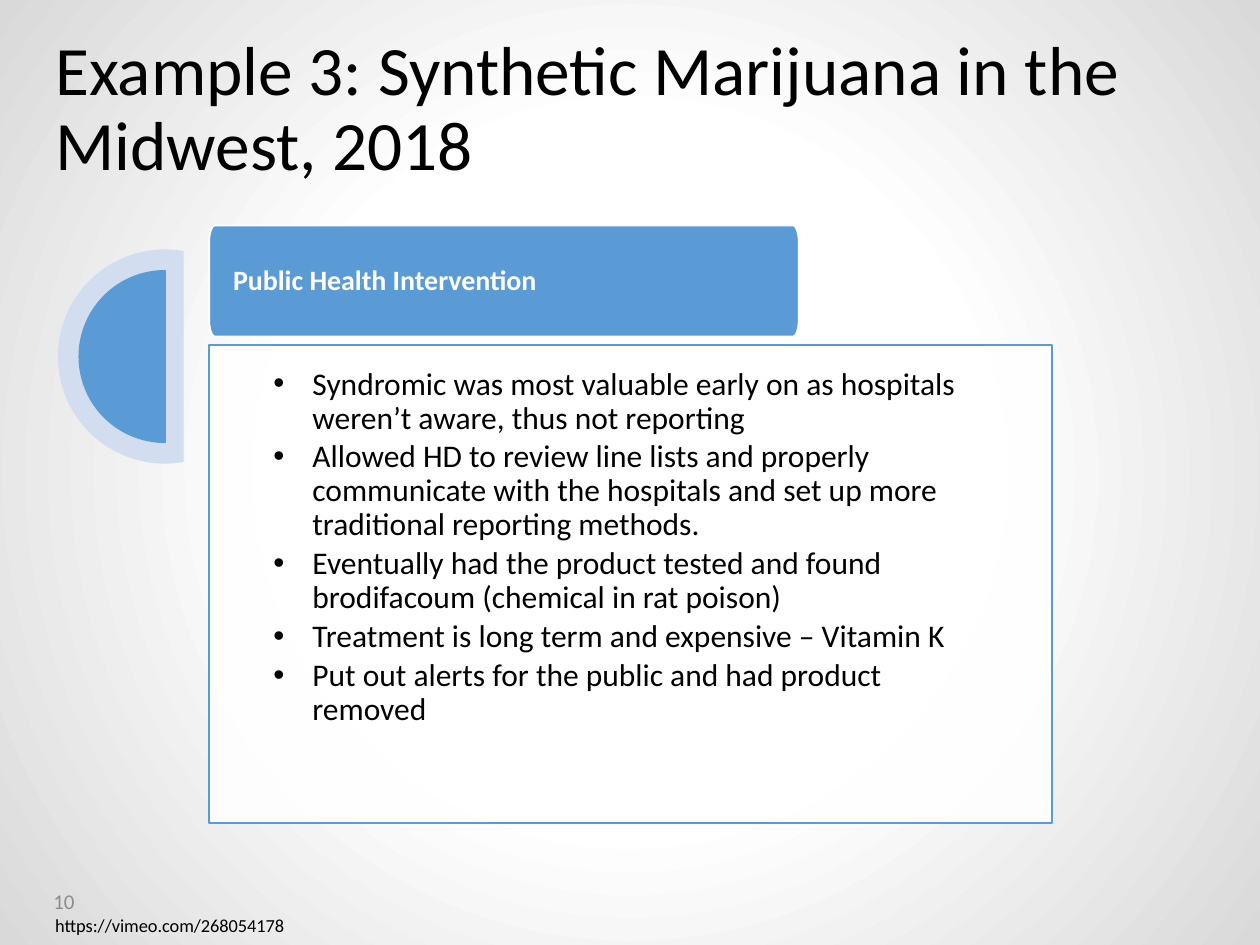
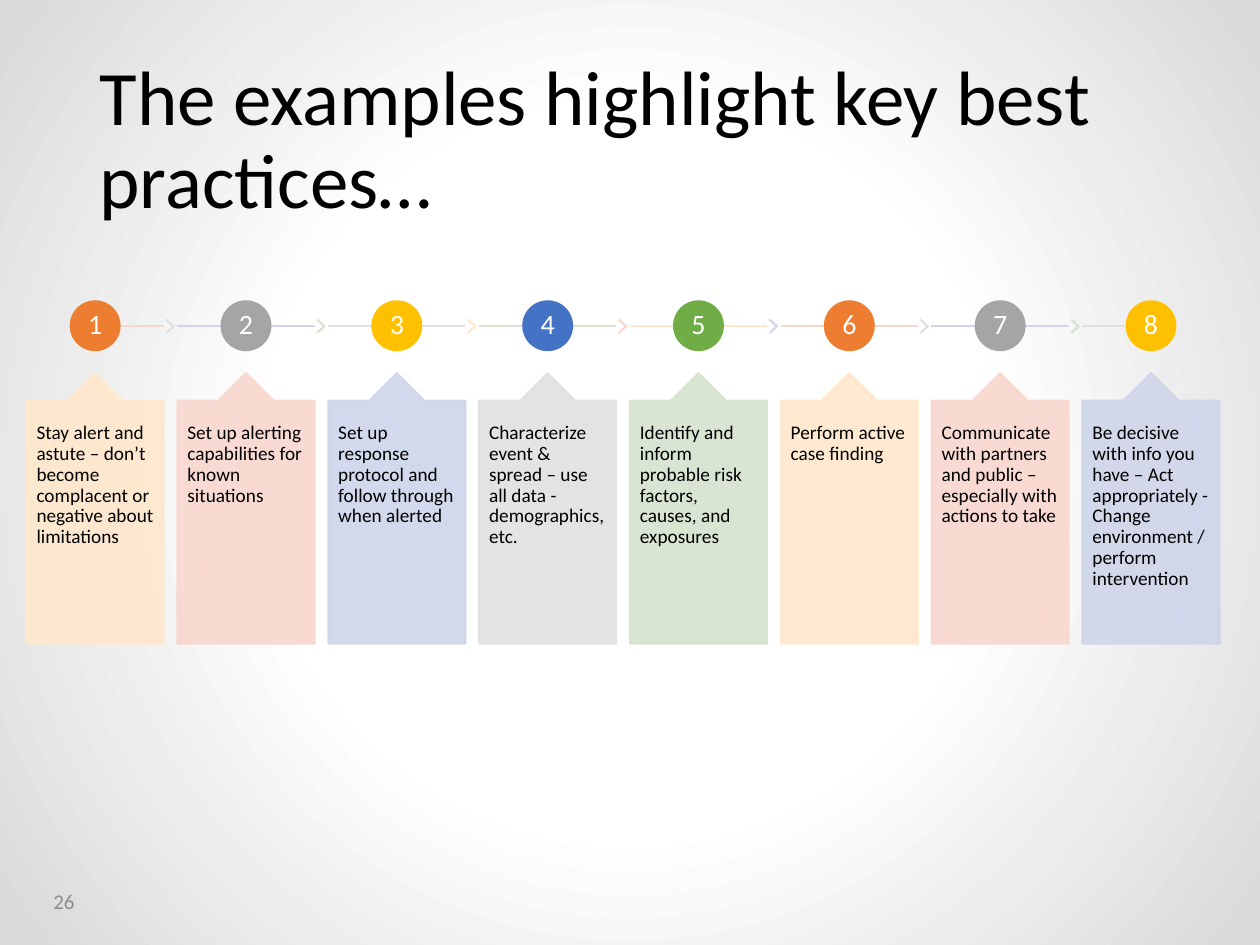
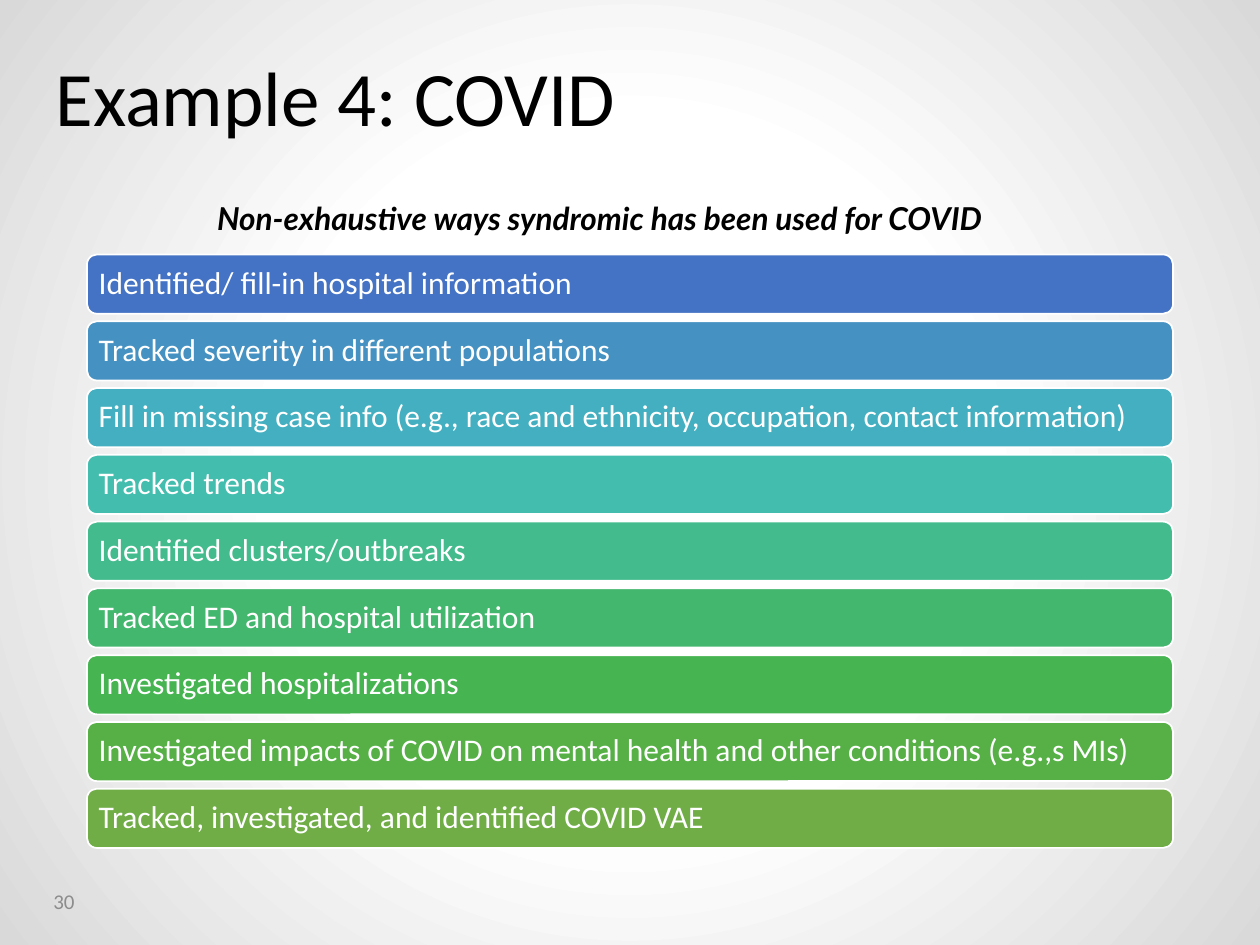
"""Build three slides on syndromic surveillance examples and best practices."""
from dataclasses import dataclass
from math import cos, radians, sin

from lxml.etree import SubElement
from pptx import Presentation
from pptx.dml.color import RGBColor
from pptx.enum.shapes import MSO_CONNECTOR, MSO_SHAPE as Preset
from pptx.enum.text import MSO_ANCHOR as Anchor, MSO_AUTO_SIZE, PP_ALIGN as Align
from pptx.oxml import parse_xml
from pptx.oxml.ns import nsdecls, qn
from pptx.util import Inches, Pt


@dataclass(frozen=True)
class Theme:
    font: str = "Calibri"
    accent_font: str = "Lato"
    ink: str = "000000"
    paper: str = "FFFFFF"
    edge: str = "D9D9D9"
    muted: str = "8C8C8C"
    blue: str = "5B9BD5"
    pale_blue: str = "D2DEEF"
    badges: tuple = ("ED7D31", "A5A5A5", "FFC000", "4472C4", "70AD47")
    pastels: tuple = ("FFE8CC", "F8D7CE", "CFD5EA", "E1E1E1", "D5E3CF")
    bars: tuple = ("4472C4", "4491C2", "43AFC0", "43BDAE", "43BB8D",
                   "44B76E", "45B451", "56B046", "70AD47")
    title_size: float = 44
    long_title_size: float = 39.6
    body_size: float = 18
    label_size: float = 16
    number_size: float = 12
    card_size: float = 11
    link_size: float = 10.5


theme = Theme()
presentation = Presentation()
presentation.slide_width = Inches(10)
presentation.slide_height = Inches(7.5)
unit = presentation.slide_width // 100


def add_box(slide, preset, area, fill=None, line=None, opacity=100):
    """Add a preset shape, or a text box when preset is None, on the 100 x 75 grid."""
    place = [round(unit * length) for length in area]
    if preset is None:
        return slide.shapes.add_textbox(*place)
    shape = slide.shapes.add_shape(preset, *place)
    shape.shadow.inherit = False
    shape.fill.solid()
    shape.fill.fore_color.rgb = RGBColor.from_string(fill)
    if line:
        shape.line.color.rgb = RGBColor.from_string(line)
        shape.line.width = Pt(1)
    else:
        shape.line.fill.background()
    if opacity < 100:
        for color in shape.element.spPr.iter(qn("a:srgbClr")):
            SubElement(color, qn("a:alpha"), val=str(opacity * 1000))
    return shape


def write(shape, lines, size, color=theme.ink, align=Align.LEFT, anchor=Anchor.MIDDLE,
          insets=(1, 0.5, 1, 0.5), spacing=0.9, after=0):
    """Write one paragraph per line and return the paragraphs."""
    frame = shape.text_frame
    frame.word_wrap = True
    frame.auto_size = MSO_AUTO_SIZE.NONE
    frame.vertical_anchor = anchor
    frame.margin_left, frame.margin_top, frame.margin_right, frame.margin_bottom = [
        round(unit * inset) for inset in insets]
    frame.text = "\n".join(lines)
    for paragraph in frame.paragraphs:
        paragraph.alignment = align
        paragraph.line_spacing = spacing
        paragraph.space_before = Pt(0)
        paragraph.space_after = Pt(after)
        paragraph.font.name = theme.font
        paragraph.font.size = Pt(size)
        paragraph.font.color.rgb = RGBColor.from_string(color)
    return frame.paragraphs


master = presentation.slide_master
master.background.fill.solid()
background = master.element.find(".//" + qn("p:bgPr"))
stops = "".join(f'<a:gs pos="{position}000"><a:srgbClr val="{color}"/></a:gs>'
                for position, color in ((0, theme.paper), (45, theme.paper), (100, theme.edge)))
background.replace(background[0], parse_xml(
    f'<a:gradFill {nsdecls("a")} rotWithShape="1"><a:gsLst>{stops}</a:gsLst><a:path path="circle">'
    '<a:fillToRect l="50000" t="50000" r="50000" b="50000"/></a:path></a:gradFill>'))

slides = []
for layout, number, title, area, size in (
        (1, "10", "Example 3: Synthetic Marijuana in the Midwest, 2018",
         (3.4, 2.8, 89.2, 12), theme.long_title_size),
        (5, "26", "The examples highlight key best practices…",
         (6.9, 4, 86.2, 14.5), theme.title_size),
        (5, "30", "Example 4: COVID", (3.4, 0.8, 86.2, 14.5), theme.title_size)):
    slide = presentation.slides.add_slide(presentation.slide_layouts[layout])
    heading = slide.shapes.title
    heading.left, heading.top, heading.width, heading.height = [
        round(unit * length) for length in area]
    write(heading, [title], size)
    write(add_box(slide, None, (0, 69.5, 6.9, 4)), [number], theme.number_size,
          theme.muted, Align.RIGHT, spacing=1)
    slides.append(slide)
intervention, practices, covid = slides

panel = intervention.placeholders[1]
panel.left, panel.top, panel.width, panel.height = [
    round(unit * length) for length in (16.6, 27.4, 66.9, 37.9)]
panel.fill.solid()
panel.fill.fore_color.rgb = RGBColor.from_string(theme.paper)
SubElement(panel.element.spPr.find(".//" + qn("a:srgbClr")), qn("a:alpha"), val="90000")
panel.line.color.rgb = RGBColor.from_string(theme.blue)
panel.line.width = Pt(1)
points = write(panel, [
    "Syndromic was most valuable early on as hospitals weren’t aware, thus not reporting",
    "Allowed HD to review line lists and properly communicate with the hospitals "
    "and set up more traditional reporting methods.",
    "Eventually had the product tested and found brodifacoum (chemical in rat poison)",
    "Treatment is long term and expensive – Vitamin K",
    "Put out alerts for the public and had product removed",
], theme.body_size, anchor=Anchor.TOP, insets=(5.1, 1.8, 5.1, 1.2), after=2.7)
for paragraph in points:
    properties = paragraph._p.get_or_add_pPr()
    properties.set("marL", str(round(unit * 3.1)))
    properties.set("indent", str(round(unit * -3.1)))

left, top, right, bottom = 16.6, 17.9, 63.4, 26.7
radius_x, radius_y = 0.45, 1.4
outline = []
for center_x, center_y, start in ((left + radius_x, top + radius_y, 180),
                                  (right - radius_x, top + radius_y, 270),
                                  (right - radius_x, bottom - radius_y, 0),
                                  (left + radius_x, bottom - radius_y, 90)):
    for angle in range(start, start + 91, 10):
        outline.append((round(unit * (center_x + radius_x * cos(radians(angle)))),
                        round(unit * (center_y + radius_y * sin(radians(angle))))))
builder = intervention.shapes.build_freeform(*outline[0])
builder.add_line_segments(outline[1:])
banner = builder.convert_to_shape()
banner.shadow.inherit = False
banner.fill.solid()
banner.fill.fore_color.rgb = RGBColor.from_string(theme.blue)
banner.line.color.rgb = RGBColor.from_string(theme.paper)
banner.line.width = Pt(1)
write(banner, ["Public Health Intervention"], theme.label_size, theme.paper,
      insets=(1.9, 0.1, 1.9, 0.1))[0].font.bold = True

for preset, area, fill, line, angles in (
        (Preset.CHORD, (4.6, 19.8, 17, 17), theme.pale_blue, None, (48, 168)),
        (Preset.PIE, (6.3, 21.5, 13.6, 13.6), theme.blue, theme.blue, (54, 162))):
    segment = add_box(intervention, preset, area, fill, line)
    segment.adjustments[0], segment.adjustments[1] = angles
write(add_box(intervention, None, (3.4, 72.1, 34, 2.8)), ["https://vimeo.com/268054178"],
      theme.link_size, anchor=Anchor.TOP, spacing=1)

steps = (
    "Stay alert and astute – don’t become complacent or negative about limitations",
    "Set up alerting capabilities for known situations",
    "Set up response protocol and follow through when alerted",
    "Characterize event & spread – use all data - demographics, etc.",
    "Identify and inform probable risk factors, causes, and exposures",
    "Perform active case finding",
    "Communicate with partners and public – especially with actions to take",
    "Be decisive with info you have – Act appropriately - Change environment / "
    "perform intervention",
)
first_left, last_left, card_width, badge = 2.1, 85.9, 10.9, 3.9
pitch = (last_left - first_left) / (len(steps) - 1)
axis = 25.85
for index, step in enumerate(steps):
    left = first_left + index * pitch
    center = left + card_width / 2
    is_last = index == len(steps) - 1
    card_color, line_color, chevron_color = [
        theme.pastels[(index + shift) % len(theme.pastels)] for shift in (0, 1, 3)]

    start = left if index else center
    end = center if is_last else left + card_width
    connector = practices.shapes.add_connector(
        MSO_CONNECTOR.STRAIGHT, *[round(unit * length) for length in (start, axis, end, axis)])
    connector.line.color.rgb = RGBColor.from_string(line_color)
    connector.line.width = Pt(1)
    SubElement(connector.element.spPr, qn("a:effectLst"))

    if not is_last:
        chevron = add_box(practices, Preset.CHEVRON, (left + 11.1, axis - 0.45, 0.6, 1),
                          chevron_color, chevron_color, 90)
        chevron.adjustments[0] = 0.9
    badge_color = theme.badges[index % len(theme.badges)]
    circle = add_box(practices, Preset.OVAL, (center - badge / 2, axis - badge / 2, badge, badge),
                     badge_color, badge_color)
    write(circle, [str(index + 1)], theme.label_size, theme.paper, Align.CENTER,
          insets=(0.2, 0.2, 0.2, 0.2))
    card = add_box(practices, Preset.UP_ARROW_CALLOUT, (left, 29.6, card_width, 21.5),
                   card_color, card_color, 90)
    for position, value in enumerate((0.5, 0.2, 0.2, 1)):
        card.adjustments[position] = value
    write(card, [step], theme.card_size, anchor=Anchor.TOP, insets=(0.8, 1.8, 0.8, 1.8))

subtitle = write(add_box(covid, None, (10.3, 15.3, 74.6, 4)),
                 ["Non-exhaustive ways syndromic has been used for COVID"],
                 theme.body_size, align=Align.CENTER, anchor=Anchor.TOP, spacing=1)[0]
subtitle.font.name = theme.accent_font
subtitle.font.bold = True
subtitle.font.italic = True

uses = (
    "Identified/ fill-in hospital information",
    "Tracked severity in different populations",
    "Fill in missing case info (e.g., race and ethnicity, occupation, contact information)",
    "Tracked trends",
    "Identified clusters/outbreaks",
    "Tracked ED and hospital utilization",
    "Investigated hospitalizations",
    "Investigated impacts of COVID on mental health and other conditions (e.g.,s MIs)",
    "Tracked, investigated, and identified COVID VAE",
)
for row, (use, color) in enumerate(zip(uses, theme.bars)):
    bar = add_box(covid, Preset.ROUNDED_RECTANGLE, (6.9, 20.2 + row * 5.3, 86.2, 4.7),
                  color, theme.paper)
    write(bar, [use], theme.body_size, theme.paper, insets=(0.7, 0.7, 0.7, 0.7))

presentation.save("out.pptx")
